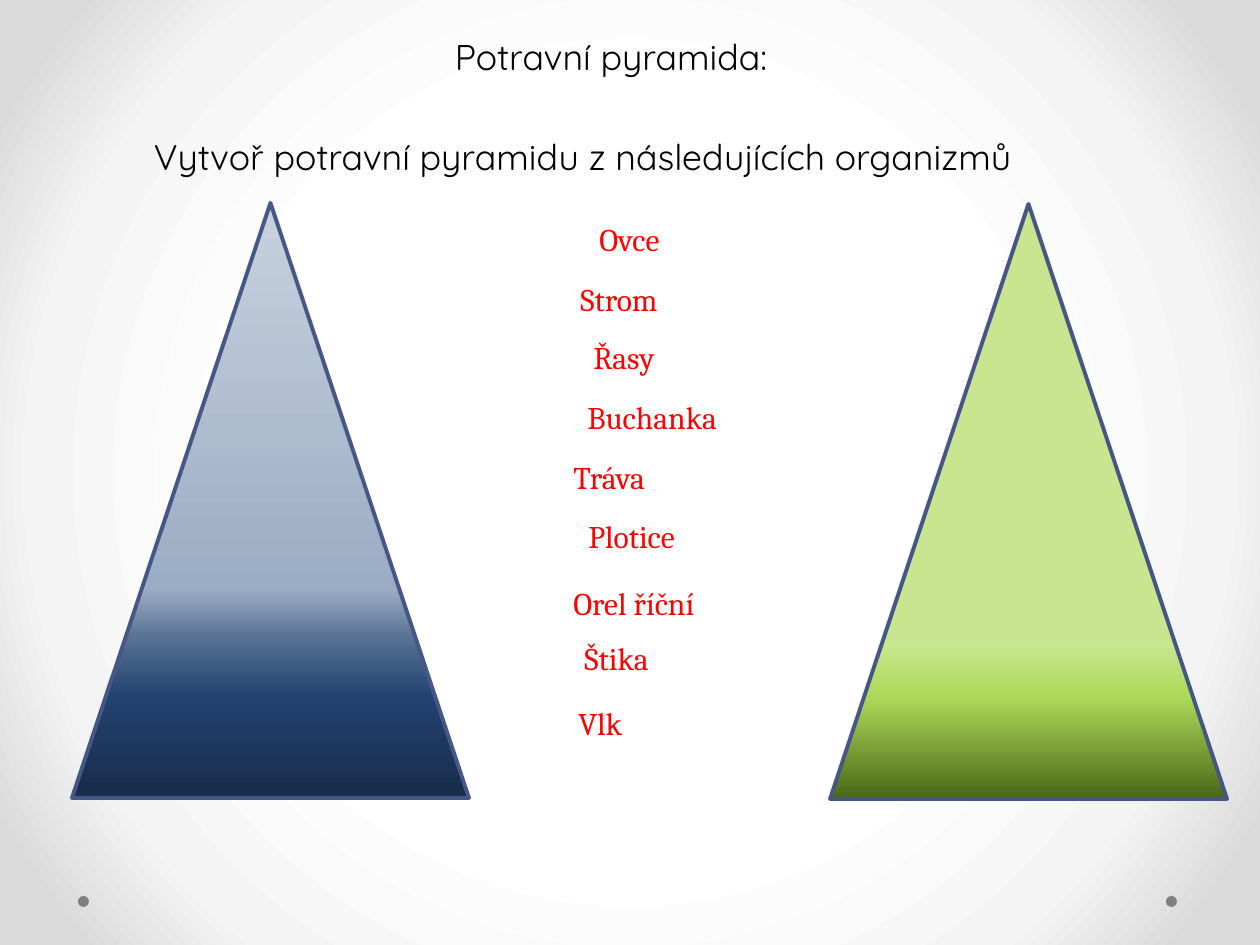
from lxml.etree import SubElement
from pptx import Presentation
from pptx.dml.color import RGBColor
from pptx.enum.shapes import MSO_SHAPE
from pptx.enum.text import MSO_ANCHOR, MSO_AUTO_SIZE, PP_ALIGN
from pptx.oxml.ns import qn
from pptx.util import Pt

PX = 914400 / 126
BLACK = RGBColor(0x00, 0x00, 0x00)
RED = RGBColor(0xFF, 0x00, 0x00)
GREY = RGBColor(0x80, 0x80, 0x80)
OUTLINE = RGBColor(0x47, 0x57, 0x85)

# Gradients: (position in percent, colour)
BACKGROUND = [
    (50, RGBColor(0xFF, 0xFF, 0xFF)),
    (76, RGBColor(0xF4, 0xF4, 0xF4)),
    (92, RGBColor(0xDA, 0xDA, 0xDA)),
]
WATER = [
    (0, RGBColor(0xC7, 0xD1, 0xDE)),
    (65, RGBColor(0x9B, 0xAD, 0xC4)),
    (73, RGBColor(0x57, 0x72, 0x93)),
    (83, RGBColor(0x23, 0x42, 0x71)),
    (100, RGBColor(0x18, 0x2C, 0x4B)),
]
LAND = [
    (0, RGBColor(0xC7, 0xE6, 0x8F)),
    (74, RGBColor(0xC7, 0xE6, 0x8F)),
    (83, RGBColor(0xAB, 0xD9, 0x58)),
    (100, RGBColor(0x4A, 0x67, 0x17)),
]

TITLE = "Potravní pyramida:"
TASK = "Vytvoř potravní pyramidu z následujících organizmů"
# Organisms: (name, left, top, width) in px
ORGANISMS = [
    ("Ovce", 587, 214, 98),
    ("Strom", 568, 274, 111),
    ("Řasy", 581, 332, 93),
    ("Buchanka", 575, 392, 165),
    ("Tráva", 561, 452, 105),
    ("Plotice", 576, 511, 121),
    ("Orel říční", 561, 578, 159),
    ("Štika", 572, 633, 96),
    ("Vlk", 566, 698, 76),
]
ORGANISM_HEIGHT = 50
# Pyramids: (left, top, gradient) in px
PYRAMIDS = [(72, 203, WATER), (830, 204, LAND)]
PYRAMID_SIZE = (397, 595)
DOT_LEFTS = (78, 1166)
DOT_TOP, DOT_SIZE = 896, 11


def px(*lengths):
    return [round(length * PX) for length in lengths]


def apply_gradient(fill, element, stops, radial=False):
    """Fill with any number of stops, downwards or outwards from the centre."""
    fill.gradient()
    gradient = next(element.iter(qn("a:gradFill")))
    stop_list = gradient.find(qn("a:gsLst"))
    for old_stop in list(stop_list):
        stop_list.remove(old_stop)
    for position, colour in stops:
        stop = SubElement(stop_list, qn("a:gs"), pos=str(position * 1000))
        SubElement(stop, qn("a:srgbClr"), val=str(colour))
    if radial:
        gradient.remove(gradient.find(qn("a:lin")))
        path = SubElement(gradient, qn("a:path"), path="circle")
        SubElement(path, qn("a:fillToRect"), l="50000", t="50000", r="50000", b="50000")
    else:
        fill.gradient_angle = 270


def add_plain_shape(slide, kind, *box):
    shape = slide.shapes.add_shape(kind, *px(*box))
    shape.shadow.inherit = False
    return shape


def format_text(shape, text, font_name, size, colour):
    frame = shape.text_frame
    frame.text = text
    paragraph = frame.paragraphs[0]
    paragraph.alignment = PP_ALIGN.LEFT
    font = paragraph.runs[0].font
    font.name, font.size = font_name, Pt(size)
    font.color.rgb = colour


def format_heading(shape, text):
    format_text(shape, text, "Quicksand", 20.4, BLACK)
    frame = shape.text_frame
    frame.word_wrap = False
    frame.auto_size = MSO_AUTO_SIZE.NONE
    frame.vertical_anchor = MSO_ANCHOR.MIDDLE
    frame.margin_left = frame.margin_right = 0
    frame.margin_top = frame.margin_bottom = 0


def main():
    presentation = Presentation()
    presentation.slide_width, presentation.slide_height = px(1260, 945)
    slide = presentation.slides.add_slide(presentation.slide_layouts[5])
    apply_gradient(slide.background.fill, slide.element, BACKGROUND, radial=True)

    for left in DOT_LEFTS:
        dot = add_plain_shape(slide, MSO_SHAPE.OVAL, left, DOT_TOP, DOT_SIZE, DOT_SIZE)
        dot.fill.solid()
        dot.fill.fore_color.rgb = GREY
        dot.line.fill.background()

    for left, top, stops in PYRAMIDS:
        pyramid = add_plain_shape(
            slide, MSO_SHAPE.ISOSCELES_TRIANGLE, left, top, *PYRAMID_SIZE
        )
        apply_gradient(pyramid.fill, pyramid.element, stops)
        pyramid.line.color.rgb = OUTLINE
        pyramid.line.width = Pt(2.25)
        SubElement(next(pyramid.element.iter(qn("a:ln"))), qn("a:round"))

    title = slide.shapes.title
    title.left, title.top, title.width, title.height = px(455, 30, 320, 52)
    format_heading(title, TITLE)
    format_heading(slide.shapes.add_textbox(*px(154, 130, 870, 52)), TASK)

    for name, left, top, width in ORGANISMS:
        label = slide.shapes.add_textbox(*px(left, top, width, ORGANISM_HEIGHT))
        format_text(label, name, "Cambria", 18, RED)
        label.text_frame.word_wrap = True

    presentation.save("out.pptx")


if __name__ == "__main__":
    main()
